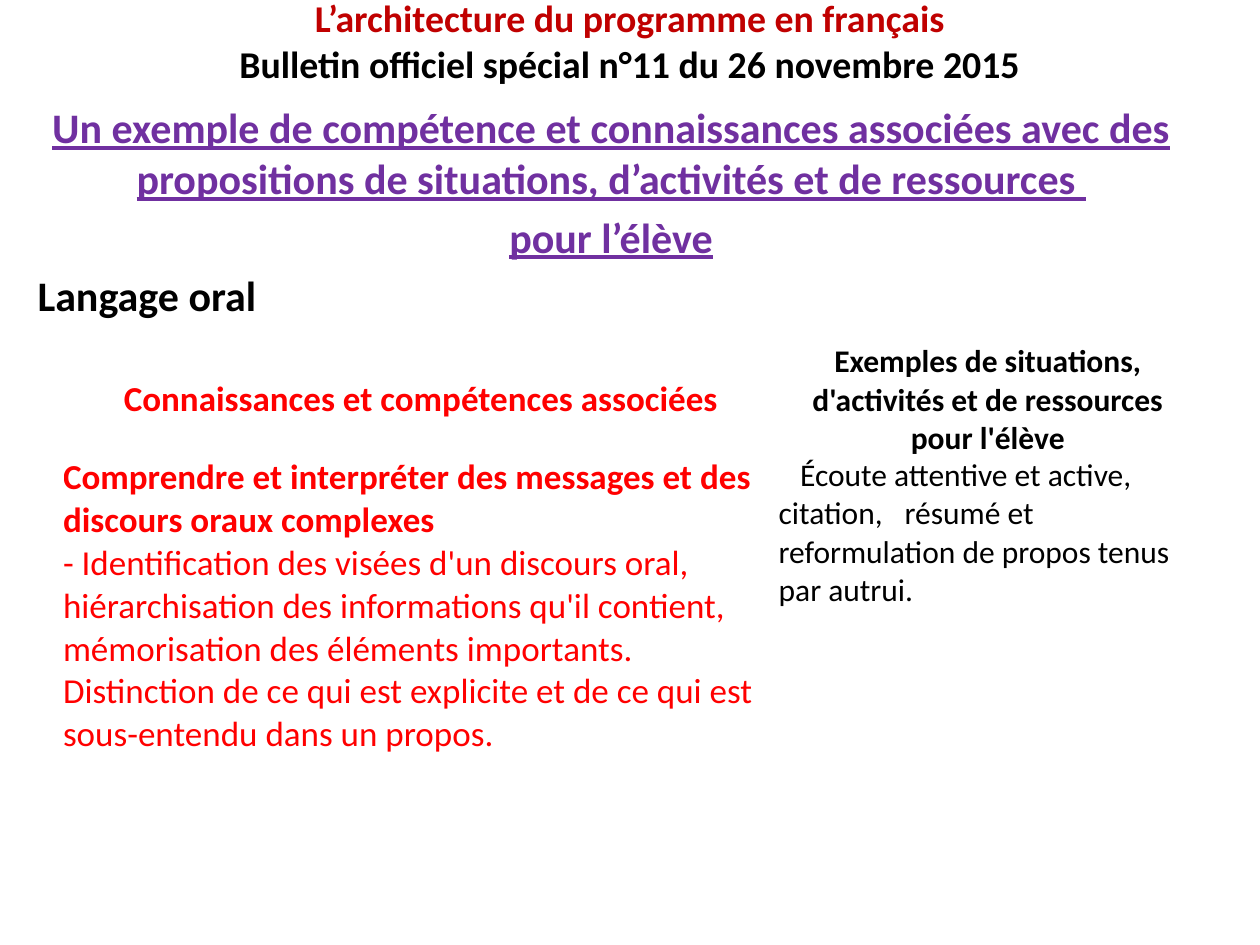
from dataclasses import dataclass

from lxml.etree import SubElement
from pptx import Presentation
from pptx.dml.color import RGBColor
from pptx.enum.text import MSO_ANCHOR as Anchor, PP_ALIGN as Align
from pptx.oxml.ns import qn
from pptx.util import Inches, Pt


@dataclass(frozen=True)
class Theme:
    font: str = "Calibri"
    dark_red: str = "C00000"
    red: str = "FF0000"
    purple: str = "7030A0"
    black: str = "000000"
    title: float = 21.6
    heading: float = 24
    main: float = 20
    side: float = 18
    gap: float = 4.8


class SlideBuilder:
    def __init__(self, slide, theme):
        self.s = slide
        self.theme = theme

    def paragraph(self, tf, text, size, color, first=False, align=Align.LEFT,
                  gap=0, **font):
        p = tf.paragraphs[0] if first else tf.add_paragraph()
        p.alignment = align
        if gap:
            p.space_before = Pt(gap)
        r = p.add_run()
        r.text = text
        r.font.color.rgb = RGBColor.from_string(color)
        values = {"name": self.theme.font, "size": Pt(size), "bold": False, **font}
        for name, value in values.items():
            setattr(r.font, name, value)
        return p

    def fill_text(self, tf, items, **common):
        """Write (text, size, colour, overrides) items as paragraphs."""
        return [self.paragraph(tf, text, size, color, first=i == 0, **{**common, **own})
                for i, (text, size, color, own) in enumerate(items)]

    def text(self, box, items, anchor=Anchor.TOP, bottom=0.05, **common):
        tf = self.s.shapes.add_textbox(*map(Inches, box)).text_frame
        frame = {"word_wrap": True, "vertical_anchor": anchor,
                 "margin_bottom": Inches(bottom)}
        for name, value in frame.items():
            setattr(tf, name, value)
        self.fill_text(tf, items, **common)

    def table(self, box, widths, heights):
        """Add a plain table without fills, banding or cell margins."""
        table = self.s.shapes.add_table(
            len(heights), len(widths), *map(Inches, box)).table
        table.first_row = table.horz_banding = False
        for column, width in zip(table.columns, widths):
            column.width = Inches(width)
        for row, height in zip(table.rows, heights):
            row.height = Inches(height)
        for cell in table.iter_cells():
            cell.fill.background()
            for side in ("left", "top", "right", "bottom"):
                setattr(cell, f"margin_{side}", 0)
        return table

    def cell(self, cell, items, anchor=Anchor.TOP, **common):
        cell.vertical_anchor = anchor
        return self.fill_text(cell.text_frame, items, **common)


def indent_with_tab(p, indent, tab):
    """Indent the first line and set one left tab stop, in inches."""
    pPr = p._p.get_or_add_pPr()
    pPr.set("marL", "0")
    pPr.set("indent", str(Inches(indent)))
    stops = SubElement(pPr, qn("a:tabLst"))
    SubElement(stops, qn("a:tab"), pos=str(Inches(tab)), algn="l")


def main():
    t = Theme()
    prs = Presentation()
    prs.slide_width, prs.slide_height = Inches(10), Inches(7.5)
    b = SlideBuilder(prs.slides.add_slide(prs.slide_layouts[6]), t)

    b.text((0.5, 0.13, 9, 0.71), [
        ("L’architecture du programme en français", t.title, t.dark_red, {}),
        ("Bulletin officiel spécial n°11 du 26 novembre 2015", t.title, t.black, {}),
    ], anchor=Anchor.MIDDLE, bottom=0.38, align=Align.CENTER, bold=True)

    centered = {"align": Align.CENTER, "underline": True}
    b.text((0.2, 0.76, 9.3, 6.46), [
        ("Un exemple de compétence et connaissances associées avec des propositions "
         "de situations, d’activités et de ressources ",
         t.heading, t.purple, centered),
        ("pour l’élève", t.heading, t.purple, {**centered, "gap": t.gap}),
        ("Langage oral", t.heading, t.black, {"gap": t.gap}),
    ], bold=True)

    table = b.table((0.5, 2.72, 9, 4.49), (5.68, 3.32), (0.9, 3.59))
    headers = [
        ("Connaissances et compétences associées", t.main, t.red, {}),
        ("Exemples de situations, d'activités et de ressources pour l'élève",
         t.side, t.black, {}),
    ]
    for col, header in enumerate(headers):
        b.cell(table.cell(0, col), [header], anchor=Anchor.MIDDLE,
               align=Align.CENTER, bold=True)
    b.cell(table.cell(1, 0), [
        ("Comprendre et interpréter des messages et des discours oraux complexes",
         t.main, t.red, {"bold": True}),
        ("- Identification des visées d'un discours oral, hiérarchisation des "
         "informations qu'il contient, mémorisation des éléments importants.",
         t.main, t.red, {}),
        ("Distinction de ce qui est explicite et de ce qui est sous-entendu dans "
         "un propos.", t.main, t.red, {}),
    ])
    examples = b.cell(table.cell(1, 1), [
        ("Écoute attentive et active, citation,\trésumé et reformulation de propos "
         "tenus par autrui.", t.side, t.black, {}),
    ])
    indent_with_tab(examples[0], indent=0.17, tab=1.05)

    prs.save("out.pptx")


if __name__ == "__main__":
    main()
